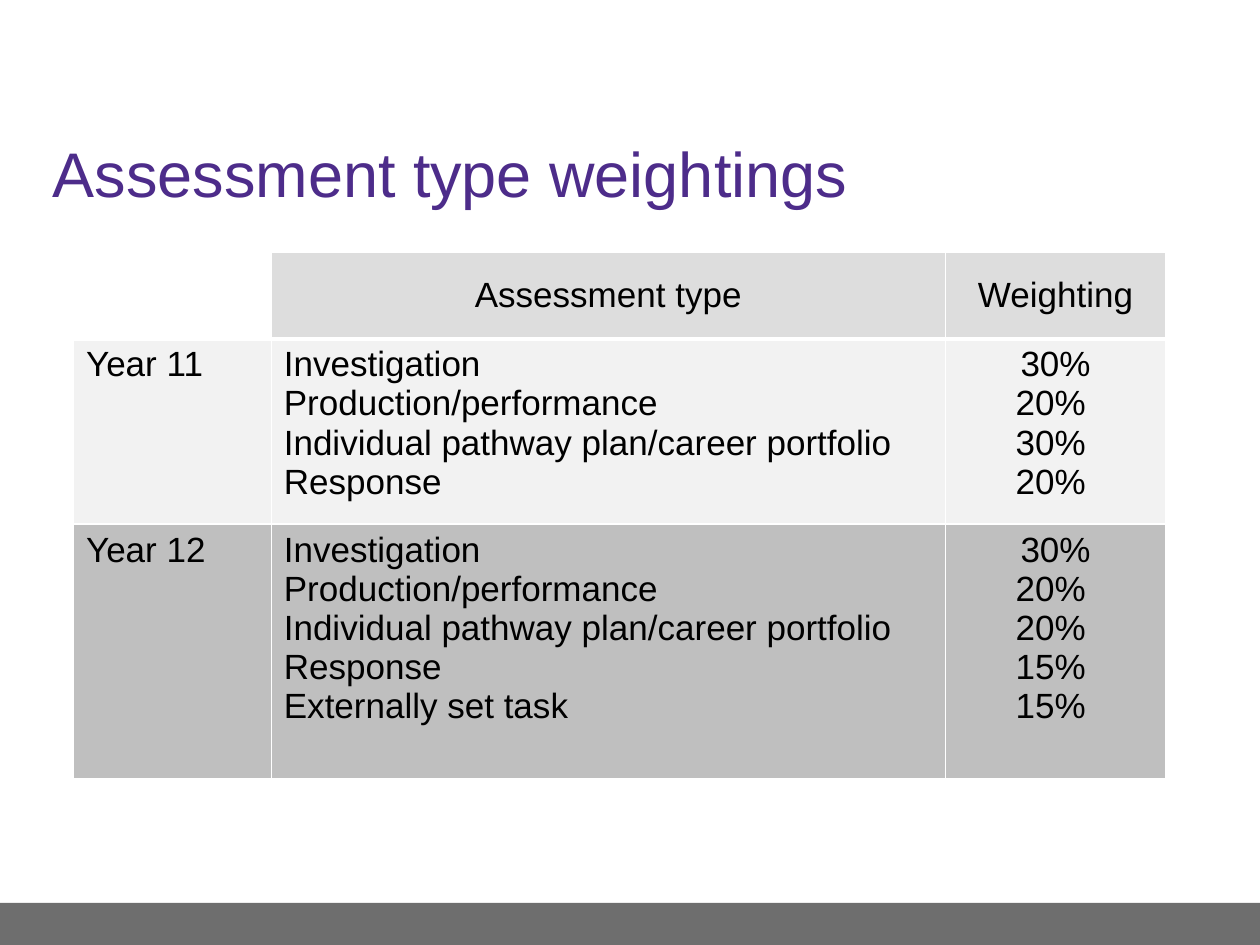
from lxml import etree
from pptx import Presentation
from pptx.dml.color import RGBColor
from pptx.enum.shapes import MSO_SHAPE
from pptx.enum.text import MSO_ANCHOR, PP_ALIGN
from pptx.oxml.ns import qn
from pptx.util import Pt

RECT = MSO_SHAPE.RECTANGLE
MIDDLE, TOP = MSO_ANCHOR.MIDDLE, MSO_ANCHOR.TOP
LEFT, CENTER = PP_ALIGN.LEFT, PP_ALIGN.CENTER

PURPLE = RGBColor(0x4D, 0x2C, 0x8A)
BLACK = RGBColor(0, 0, 0)
WHITE = RGBColor(0xFF, 0xFF, 0xFF)
HEAD = RGBColor(0xDD, 0xDD, 0xDD)
PALE = RGBColor(0xF2, 0xF2, 0xF2)
GREY = RGBColor(0xBF, 0xBF, 0xBF)
DARK = RGBColor(0x6E, 0x6E, 0x6E)

FONT = "Arial"
WIDTH, HEIGHT = 720, 540
BAR = 24
TITLE = "Assessment type weightings"
TYPES = [
    "Investigation",
    "Production/performance",
    "Individual pathway plan/career portfolio",
    "Response",
]
ROWS = [
    (["", "Assessment type", "Weighting"], HEAD, 49.7),
    (["Year 11", "\n".join(TYPES), "30%\n20% \n30% \n20% "], PALE, 105.8),
    (
        [
            "Year 12",
            "\n".join(TYPES + ["Externally set task"]),
            "30%\n20% \n20% \n15% \n15% ",
        ],
        GREY,
        145.4,
    ),
]
COLS = [113, 385.2, 126]


def style(frame, size, color, align):
    for para in frame.paragraphs:
        para.alignment = align
        for run in para.runs:
            run.font.name = FONT
            run.font.size = Pt(size)
            run.font.color.rgb = color


def edge(cell, low):
    props = cell._tc.get_or_add_tcPr()
    sides = [("a:lnL", 1), ("a:lnR", 1), ("a:lnT", 1), ("a:lnB", low)]
    for place, (tag, wide) in enumerate(sides):
        line = etree.Element(qn(tag), w=str(Pt(wide)))
        fill = etree.SubElement(line, qn("a:solidFill"))
        etree.SubElement(fill, qn("a:srgbClr"), val=str(WHITE))
        props.insert(place, line)


def add_grid(slide):
    heights = [row[2] for row in ROWS]
    grid = slide.shapes.add_table(
        len(ROWS), len(COLS), Pt(42), Pt(144), Pt(sum(COLS)), Pt(sum(heights))
    ).table
    for col, wide in zip(grid.columns, COLS):
        col.width = Pt(wide)
    for r, (texts, color, high) in enumerate(ROWS):
        grid.rows[r].height = Pt(high)
        for c, text in enumerate(texts):
            cell = grid.cell(r, c)
            cell.text_frame.text = text
            cell.vertical_anchor = TOP if r else MIDDLE
            cell.fill.solid()
            cell.fill.fore_color.rgb = color if text else WHITE
            style(cell.text_frame, 20, BLACK, CENTER if r == 0 or c == 2 else LEFT)
            edge(cell, 1 if r else 3)


def main():
    deck = Presentation()
    deck.slide_width, deck.slide_height = Pt(WIDTH), Pt(HEIGHT)
    slide = deck.slides.add_slide(deck.slide_layouts[6])

    bar = slide.shapes.add_shape(RECT, 0, Pt(HEIGHT - BAR), Pt(WIDTH), Pt(BAR))
    bar.shadow.inherit = False
    bar.fill.solid()
    bar.fill.fore_color.rgb = DARK
    bar.line.fill.background()

    frame = slide.shapes.add_textbox(Pt(23), Pt(65.5), Pt(673), Pt(66)).text_frame
    frame.word_wrap = True
    frame.vertical_anchor = MIDDLE
    frame.text = TITLE
    style(frame, 36, PURPLE, LEFT)

    add_grid(slide)
    deck.save("out.pptx")


if __name__ == "__main__":
    main()
